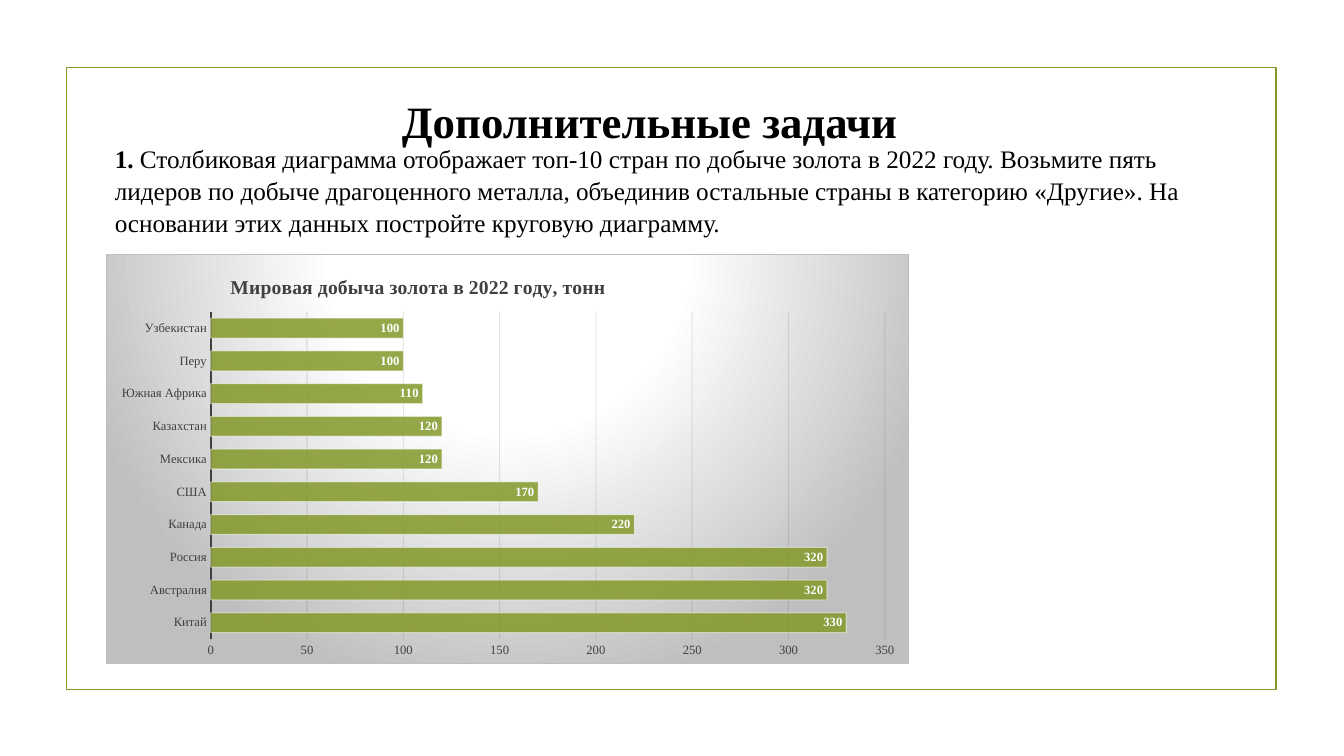
from lxml import etree
from pptx import Presentation
from pptx.chart.data import CategoryChartData
from pptx.dml.color import RGBColor
from pptx.enum.chart import XL_CHART_TYPE, XL_LABEL_POSITION, XL_TICK_MARK
from pptx.enum.shapes import MSO_SHAPE
from pptx.enum.text import MSO_ANCHOR, MSO_AUTO_SIZE, PP_ALIGN
from pptx.oxml import parse_xml
from pptx.oxml.ns import nsdecls, qn
from pptx.util import Inches, Pt

BAR = XL_CHART_TYPE.BAR_CLUSTERED
INSIDE_END = XL_LABEL_POSITION.INSIDE_END
NO_TICK = XL_TICK_MARK.NONE
RECTANGLE = MSO_SHAPE.RECTANGLE
TOP = MSO_ANCHOR.TOP
GROW = MSO_AUTO_SIZE.SHAPE_TO_FIT_TEXT
LEFT, CENTER = PP_ALIGN.LEFT, PP_ALIGN.CENTER

FONT = "Times New Roman"
COLORS = {"green": "83992A", "black": "000000", "dark": "404040",
          "grid": "0D0D0D", "gray": "BFBFBF", "white": "FFFFFF"}

TASK = (" Столбиковая диаграмма отображает топ-10 стран по добыче золота в 2022 году. "
        "Возьмите пять лидеров по добыче драгоценного металла, объединив остальные страны "
        "в категорию «Другие». На основании этих данных постройте круговую диаграмму.")
GOLD_OUTPUT = {"Китай": 330, "Австралия": 320, "Россия": 320, "Канада": 220,
               "США": 170, "Мексика": 120, "Казахстан": 120, "Южная Африка": 110,
               "Перу": 100, "Узбекистан": 100}


def style_font(font, size, color="black", bold=False):
    font.name = FONT
    font.size = Pt(size)
    font.bold = bold
    font.color.rgb = RGBColor.from_string(COLORS[color])


def style_line(line, color, width):
    line.fill.solid()
    line.fill.fore_color.rgb = RGBColor.from_string(COLORS[color])
    line.width = Pt(width)


def add_span(para, text, **style):
    span = para.add_run()
    span.text = text
    style_font(span.font, **style)


def set_opacity(chart, query, percent):
    """Make the colours found by an XPath query in the chart partly transparent."""
    for color in chart.element.xpath(query):
        etree.SubElement(color, qn("a:alpha")).set("val", str(percent * 1000))


def place_part(part, index, **fractions):
    """Give a chart part a manual layout, in fractions of the chart size."""
    for layout in part.findall(qn("c:layout")):
        part.remove(layout)
    modes = '<c:xMode val="edge"/><c:yMode val="edge"/>'
    target = '<c:layoutTarget val="inner"/>' if "w" in fractions else ""
    sizes = "".join(f'<c:{key} val="{value}"/>' for key, value in fractions.items())
    part.insert(index, parse_xml(
        f'<c:layout {nsdecls("c")}><c:manualLayout>{target}{modes}{sizes}'
        '</c:manualLayout></c:layout>'))


def fill_chart_area(chart):
    """Put a round gradient and a thin border behind the whole chart."""
    stops = "".join(
        f'<a:gs pos="{position * 1000}"><a:srgbClr val="{COLORS[color]}"/></a:gs>'
        for position, color in ((0, "white"), (39, "white"), (100, "gray")))
    area = parse_xml(
        f'<c:spPr {nsdecls("c", "a")}><a:gradFill><a:gsLst>{stops}</a:gsLst>'
        '<a:path path="circle"><a:fillToRect l="50000" t="-80000" r="50000" b="180000"/>'
        f'</a:path></a:gradFill><a:ln w="{Pt(0.75)}"><a:solidFill>'
        f'<a:srgbClr val="{COLORS["gray"]}"/></a:solidFill></a:ln></c:spPr>')
    chart.element.find(qn("c:chart")).addnext(area)


class Page:
    """Holds the deck's current slide and adds styled elements to it."""

    def __init__(self, deck):
        self.slide = deck.slides.add_slide(deck.slide_layouts[5])

    def frame(self, *bounds):
        box = self.slide.shapes.add_shape(RECTANGLE, *map(Inches, bounds))
        box.fill.background()
        box.shadow.inherit = False
        style_line(box.line, "green", 1.25)

    def fill_box(self, box, spans, align, wrap, size):
        frame = box.text_frame
        frame.word_wrap = wrap
        frame.auto_size = GROW
        frame.vertical_anchor = TOP
        para = frame.paragraphs[0]
        para.alignment = align
        para.line_spacing = 1.07
        para.space_before = Pt(0)
        para.space_after = Pt(8)
        for text, bold in spans:
            add_span(para, text, size=size, bold=bold)

    def title(self, text, left, top, width, height):
        box = self.slide.shapes.title
        box.left, box.top = Inches(left), Inches(top)
        box.width, box.height = Inches(width), Inches(height)
        self.fill_box(box, [(text, True)], CENTER, False, 32)

    def text(self, spans, *bounds):
        box = self.slide.shapes.add_textbox(*map(Inches, bounds))
        self.fill_box(box, spans, LEFT, True, 18)

    def bar_chart(self, title, values, *bounds):
        data = CategoryChartData()
        data.categories = values.keys()
        data.add_series("Series 1", values.values())
        chart = self.slide.shapes.add_chart(BAR, *map(Inches, bounds), data).chart
        style_font(chart.font, 10)
        chart.has_legend = False
        chart.has_title = True
        add_span(chart.chart_title.text_frame.paragraphs[0], title,
                 size=14, color="dark", bold=True)
        place_part(chart.chart_title.element, 1, x=0.15, y=0.04)
        place_part(chart.element.xpath("c:chart/c:plotArea")[0], 0,
                   x=0.13, y=0.14, w=0.84, h=0.8)
        fill_chart_area(chart)
        self.style_axes(chart)
        self.style_bars(chart)

    def style_axes(self, chart):
        for axis in (chart.category_axis, chart.value_axis):
            axis.major_tick_mark = axis.minor_tick_mark = NO_TICK
            style_font(axis.tick_labels.font, 9, "dark")
        chart.category_axis.has_major_gridlines = False
        style_line(chart.category_axis.format.line, "dark", 1.5)
        scale = chart.value_axis
        scale.minimum_scale, scale.maximum_scale, scale.major_unit = 0, 350, 50
        scale.format.line.fill.background()
        scale.has_major_gridlines = True
        style_line(scale.major_gridlines.format.line, "grid", 0.75)
        set_opacity(chart, ".//c:majorGridlines//a:srgbClr", 10)

    def style_bars(self, chart):
        plot = chart.plots[0]
        plot.gap_width = 65
        plot.vary_by_categories = False
        bars = plot.series[0]
        bars.format.fill.solid()
        bars.format.fill.fore_color.rgb = RGBColor.from_string(COLORS["green"])
        style_line(bars.format.line, "white", 0.75)
        set_opacity(chart, ".//c:ser/c:spPr/a:solidFill/a:srgbClr", 85)
        set_opacity(chart, ".//c:ser/c:spPr/a:ln//a:srgbClr", 50)
        labels = bars.data_labels
        labels.show_value = True
        labels.position = INSIDE_END
        style_font(labels.font, 9, "white", True)


def main():
    deck = Presentation()
    deck.slide_width, deck.slide_height = Inches(13.33), Inches(7.5)
    page = Page(deck)
    page.frame(0.66, 0.67, 12, 6.17)
    page.title("Дополнительные задачи", 3.86, 0.84, 5.17, 0.65)
    page.text([("1.", True), (TASK, False)], 1.04, 1.35, 11.46, 1.07)
    page.bar_chart("Мировая добыча золота в 2022 году, тонн", GOLD_OUTPUT,
                   1.05, 2.52, 7.97, 4.07)
    deck.save("out.pptx")


if __name__ == "__main__":
    main()
